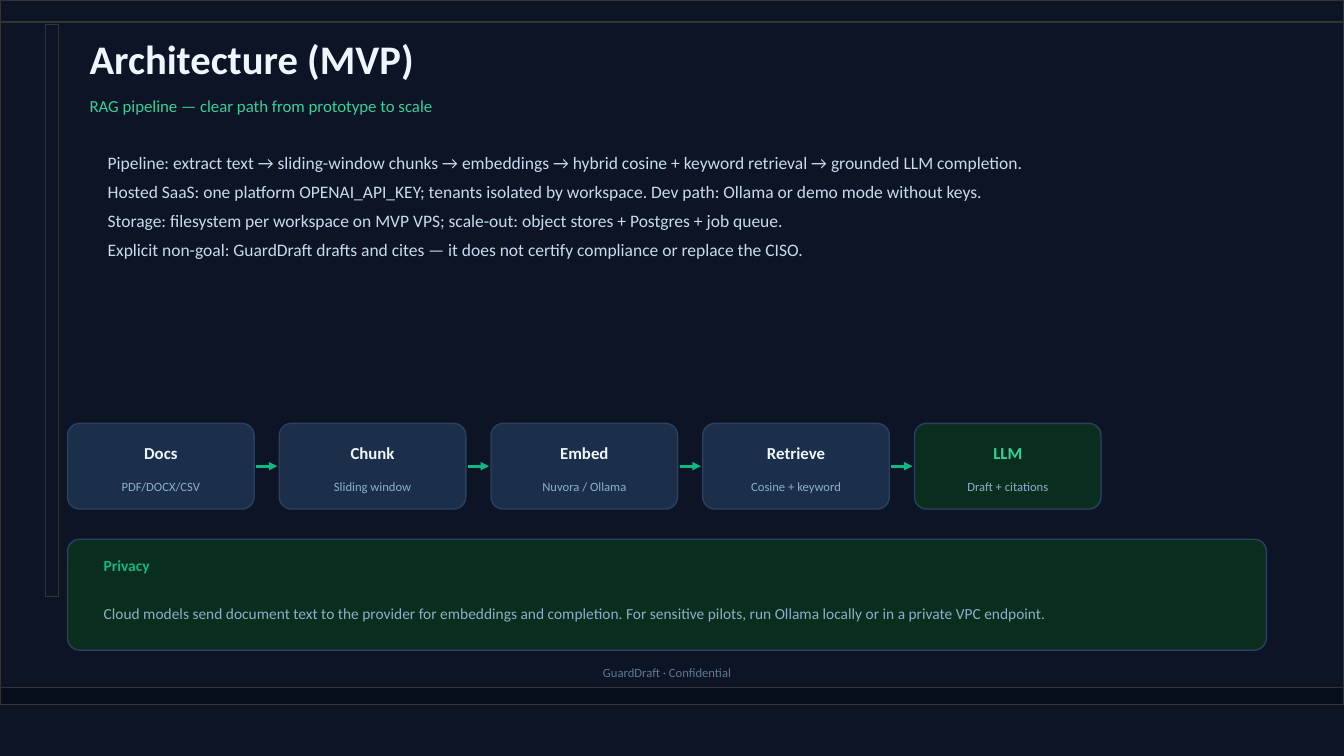
from lxml import etree
from pptx import Presentation
from pptx.dml.color import RGBColor
from pptx.enum.shapes import MSO_CONNECTOR, MSO_SHAPE
from pptx.enum.text import MSO_ANCHOR, PP_ALIGN
from pptx.oxml.ns import qn
from pptx.util import Inches, Pt

RECTANGLE, ROUNDED = MSO_SHAPE.RECTANGLE, MSO_SHAPE.ROUNDED_RECTANGLE
STRAIGHT = MSO_CONNECTOR.STRAIGHT
TOP, MIDDLE = MSO_ANCHOR.TOP, MSO_ANCHOR.MIDDLE
LEFT, CENTER = PP_ALIGN.LEFT, PP_ALIGN.CENTER

NIGHT = RGBColor(0x0D, 0x14, 0x25)
FOOTER_FILL = RGBColor(0x08, 0x0F, 0x1C)
FRAME = RGBColor(0x33, 0x33, 0x33)
CARD = RGBColor(0x1C, 0x2F, 0x4A)
CARD_EDGE = RGBColor(0x2A, 0x40, 0x60)
FOREST = RGBColor(0x0A, 0x2E, 0x1E)
EMERALD = RGBColor(0x10, 0xB9, 0x81)
MINT = RGBColor(0x34, 0xD3, 0x99)
WHITE = RGBColor(0xF0, 0xF6, 0xFF)
BODY = RGBColor(0xC8, 0xDA, 0xF0)
MUTED = RGBColor(0x8B, 0xAF, 0xC8)
FAINT = RGBColor(0x5A, 0x7A, 0x94)

FONT = "Calibri"
WIDTH, HEIGHT = 13.33, 7.5
CORNER = 0.12

POINTS = [
    "Pipeline: extract text → sliding-window chunks → embeddings → "
    "hybrid cosine + keyword retrieval → grounded LLM completion.",
    "Hosted SaaS: one platform OPENAI_API_KEY; tenants isolated by workspace. "
    "Dev path: Ollama or demo mode without keys.",
    "Storage: filesystem per workspace on MVP VPS; scale-out: "
    "object stores + Postgres + job queue.",
    "Explicit non-goal: GuardDraft drafts and cites — "
    "it does not certify compliance or replace the CISO.",
]
STAGES = [
    ("Docs", "PDF/DOCX/CSV"),
    ("Chunk", "Sliding window"),
    ("Embed", "Nuvora / Ollama"),
    ("Retrieve", "Cosine + keyword"),
    ("LLM", "Draft + citations"),
]
PRIVACY = ("Cloud models send document text to the provider for embeddings and completion. "
           "For sensitive pilots, run Ollama locally or in a private VPC endpoint.")


def add_text(page, box, lines, size, color, bold=False, align=LEFT, anchor=MIDDLE, spacing=None):
    frame = page.shapes.add_textbox(*map(Inches, box)).text_frame
    frame.word_wrap = True
    frame.vertical_anchor = anchor
    frame.text = "\n".join(lines)
    for para in frame.paragraphs:
        para.alignment = align
        para.line_spacing = spacing
        for span in para.runs:
            span.font.name = FONT
            span.font.size = Pt(size)
            span.font.bold = bold
            span.font.color.rgb = color


def add_panel(page, box, fill=None, line=FRAME, kind=RECTANGLE):
    panel = page.shapes.add_shape(kind, *map(Inches, box))
    panel.shadow.inherit = False
    if kind == ROUNDED:
        panel.adjustments[0] = CORNER / min(box[2:])
    if fill is None:
        panel.fill.background()
    else:
        panel.fill.solid()
        panel.fill.fore_color.rgb = fill
    panel.line.color.rgb = line
    panel.line.width = Pt(1)


def add_arrow(page, start, end, middle):
    arrow = page.shapes.add_connector(
        STRAIGHT, Inches(start), Inches(middle), Inches(end), Inches(middle))
    arrow.line.color.rgb = EMERALD
    arrow.line.width = Pt(2)
    etree.SubElement(arrow.line._get_or_add_ln(), qn("a:tailEnd"), type="triangle")
    etree.SubElement(arrow._element.spPr, qn("a:effectLst"))


def add_frame(page, width, bottom):
    add_panel(page, (0, 0, width, bottom))
    add_panel(page, (0, 0, width, 0.22))
    add_panel(page, (0.45, 0.24, 0.13, 5.68))


def add_heading(page, left, top):
    add_text(page, (left, top, 11.65, 0.62), ["Architecture (MVP)"], 29, WHITE, bold=True)
    add_text(page, (left, top + 0.6, 7.64, 0.36),
             ["RAG pipeline — clear path from prototype to scale"], 12, MINT)


def add_pipeline(page, left, top):
    width, height, pitch, pad = 1.85, 0.85, 2.1, 0.1
    for index, (name, detail) in enumerate(STAGES):
        x = left + index * pitch
        last = index == len(STAGES) - 1
        inner = width - 2 * pad
        add_panel(page, (x, top, width, height), FOREST if last else CARD, CARD_EDGE, ROUNDED)
        add_text(page, (x + pad, top + 0.1, inner, 0.38), [name], 12,
                 MINT if last else WHITE, bold=True, align=CENTER)
        add_text(page, (x + pad, top + 0.48, inner, 0.3), [detail], 9, MUTED, align=CENTER)
        if not last:
            add_arrow(page, x + width + 0.02, x + pitch - 0.02, top + height / 2)


def add_privacy(page, left, top, width, height):
    add_panel(page, (left, top, width, height), FOREST, CARD_EDGE, ROUNDED)
    add_text(page, (left + 0.26, top + 0.11, 1.2, 0.3), ["Privacy"], 11, EMERALD, bold=True)
    add_text(page, (left + 0.26, top + 0.39, width - 0.52, 0.65), [PRIVACY], 11, MUTED,
             spacing=1.2)


def add_footer(page, width, bottom):
    add_panel(page, (0, bottom - 0.17, width, 0.17), FOOTER_FILL)
    add_text(page, (0.45, bottom - 0.47, 12.33, 0.3), ["GuardDraft · Confidential"], 9, FAINT,
             align=CENTER)


def main():
    deck = Presentation()
    deck.slide_width, deck.slide_height = Inches(WIDTH), Inches(HEIGHT)
    page = deck.slides.add_slide(deck.slide_layouts[6])
    page.background.fill.solid()
    page.background.fill.fore_color.rgb = NIGHT

    # Frame and heading
    add_frame(page, WIDTH, 6.99)
    add_heading(page, 0.79, 0.27)
    # Key points
    add_text(page, (0.97, 1.38, 11.33, 2.6), POINTS, 12.5, BODY, anchor=TOP, spacing=1.38)
    # Pipeline stages and privacy note
    add_pipeline(page, 0.67, 4.2)
    add_privacy(page, 0.67, 5.35, 11.89, 1.1)
    # Footer
    add_footer(page, WIDTH, 6.99)
    deck.save("out.pptx")


if __name__ == "__main__":
    main()
